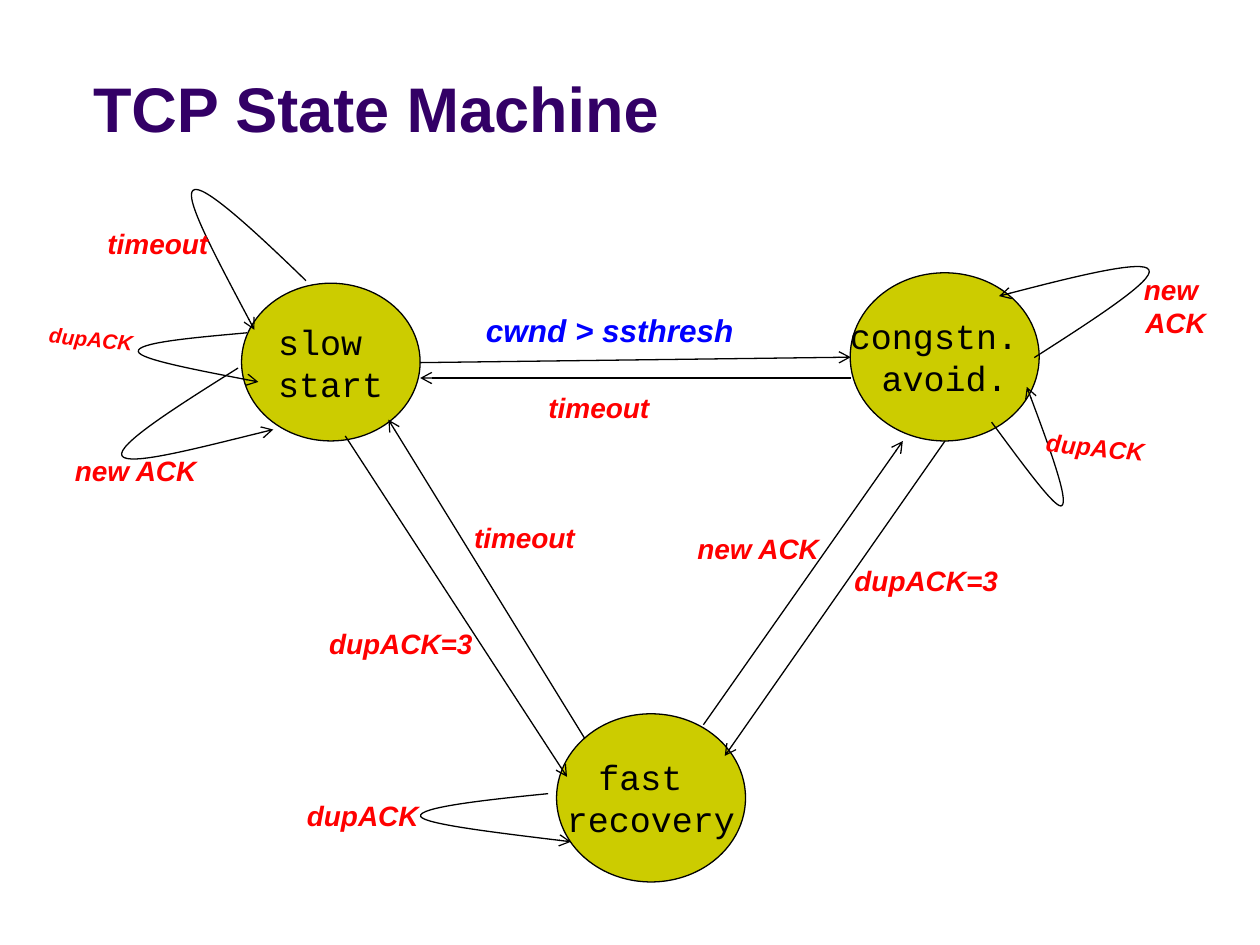
from dataclasses import dataclass

from lxml import etree
from pptx import Presentation
from pptx.dml.color import RGBColor
from pptx.enum.shapes import MSO_CONNECTOR, MSO_SHAPE
from pptx.enum.text import MSO_ANCHOR, MSO_AUTO_SIZE, PP_ALIGN
from pptx.oxml.ns import qn
from pptx.util import Cm, Pt

ELLIPSE, STRAIGHT = MSO_SHAPE.OVAL, MSO_CONNECTOR.STRAIGHT
LEFT, CENTER, RIGHT = PP_ALIGN.LEFT, PP_ALIGN.CENTER, PP_ALIGN.RIGHT
MIDDLE, BOTTOM = MSO_ANCHOR.MIDDLE, MSO_ANCHOR.BOTTOM
FIXED, GROW = MSO_AUTO_SIZE.NONE, MSO_AUTO_SIZE.SHAPE_TO_FIT_TEXT


@dataclass(frozen=True)
class Theme:
    title: str = "330066"
    state: str = "CCCC00"
    ink: str = "000000"
    event: str = "FF0000"
    condition: str = "0000FF"
    sans: str = "Arial"
    mono: str = "Courier New"
    title_size: int = 36
    state_size: int = 20
    condition_size: int = 18
    event_size: int = 16
    line_width: float = 0.75


class Diagram:
    def __init__(self, slide, theme):
        self.s, self.t = slide, theme

    def set_text(self, shape, text, color, align, frame, **font):
        tf = shape.text_frame
        for name, value in frame.items():
            setattr(tf, name, value)
        p = tf.paragraphs[0]
        p.text, p.alignment = text, align
        for r in p.runs:
            for name, value in font.items():
                setattr(r.font, name, value)
            r.font.color.rgb = RGBColor.from_string(color)

    def outline(self, line):
        line.color.rgb = RGBColor.from_string(self.t.ink)
        line.width = Pt(self.t.line_width)

    def arrowhead(self, line):
        self.outline(line)
        ln = line._get_or_add_ln()
        etree.SubElement(ln, qn("a:tailEnd"), type="arrow")

    def title(self, text, x, y, w, h):
        sp = self.s.shapes.title
        sp.left, sp.top, sp.width, sp.height = map(Cm, (x, y, w, h))
        frame = {"vertical_anchor": BOTTOM, "word_wrap": True, "auto_size": FIXED}
        self.set_text(sp, text, self.t.title, LEFT, frame, name=self.t.sans,
                      size=Pt(self.t.title_size), bold=True)

    def state(self, text, x, y, w, h):
        sp = self.s.shapes.add_shape(ELLIPSE, *map(Cm, (x, y, w, h)))
        sp.shadow.inherit = False
        sp.fill.solid()
        sp.fill.fore_color.rgb = RGBColor.from_string(self.t.state)
        self.outline(sp.line)
        frame = {"vertical_anchor": MIDDLE, "word_wrap": False}
        self.set_text(sp, text, self.t.ink, CENTER, frame, name=self.t.mono,
                      size=Pt(self.t.state_size))

    def transition(self, x1, y1, x2, y2):
        c = self.s.shapes.add_connector(STRAIGHT, *map(Cm, (x1, y1, x2, y2)))
        self.arrowhead(c.line)
        etree.SubElement(c._element.spPr, qn("a:effectLst"))

    def loop(self, *points):
        """Two joined Bezier curves: a start, then three points for each."""
        start, *rest = [(Cm(x), Cm(y)) for x, y in points]
        builder = self.s.shapes.build_freeform(*start)
        builder.add_line_segments(rest, close=False)
        sp = builder.convert_to_shape()
        sp.shadow.inherit = False
        sp.fill.background()
        # Regroup the straight segments as cubic curves
        outline = next(sp._element.iter(qn("a:path")))
        segments = outline.findall(qn("a:lnTo"))
        for i in range(0, len(segments), 3):
            curve = etree.SubElement(outline, qn("a:cubicBezTo"))
            for segment in segments[i:i + 3]:
                curve.append(segment[0])
                outline.remove(segment)
        self.arrowhead(sp.line)

    def label(self, text, x, y, w, h=0.94, size=None, color=None, rotation=0):
        sp = self.s.shapes.add_textbox(*map(Cm, (x, y, w, h)))
        sp.rotation = rotation
        frame = {"word_wrap": bool(rotation), "auto_size": GROW}
        self.set_text(sp, text, color or self.t.event, RIGHT, frame,
                      name=self.t.sans, size=Pt(size or self.t.event_size),
                      bold=True, italic=True)


def main():
    prs = Presentation()
    prs.slide_width, prs.slide_height = Cm(25.4), Cm(19.05)
    theme = Theme()
    d = Diagram(prs.slides.add_slide(prs.slide_layouts[5]), theme)
    d.title(" TCP State Machine", 1.27, 0.43, 22.86, 2.62)

    # States
    d.state("slow \nstart", 4.87, 5.71, 3.6, 3.18)
    d.state("congstn. \navoid.", 17.14, 5.5, 3.81, 3.39)
    d.state("fast \nrecovery", 11.22, 14.39, 3.81, 3.39)

    # Transitions between states
    for ends in (
        (8.47, 7.31, 17.15, 7.2),
        (17.15, 7.62, 8.47, 7.62),
        (6.96, 8.79, 11.43, 15.66),
        (19.05, 8.89, 14.61, 15.24),
        (14.18, 14.61, 18.2, 8.89),
        (11.79, 14.89, 7.83, 8.46),
    ):
        d.transition(*ends)

    # Loops back to the same state
    for points in (
        ((11.05, 16), (9.73, 16.13), (8.41, 16.28), (8.48, 16.46),
         (8.56, 16.61), (10.03, 16.79), (11.51, 16.97)),
        ((4.8, 7.42), (3.56, 8.2), (2.34, 8.97), (2.46, 9.19),
         (2.59, 9.4), (4.04, 9.02), (5.51, 8.66)),
        ((6.17, 5.66), (5.13, 4.65), (4.06, 3.66), (3.89, 3.84),
         (3.71, 3.99), (4.42, 5.31), (5.13, 6.65)),
        ((20.85, 7.21), (22.07, 6.43), (23.29, 5.64), (23.16, 5.44),
         (23.06, 5.23), (21.59, 5.59), (20.14, 5.97)),
        ((4.98, 6.71), (3.86, 6.81), (2.74, 6.91), (2.79, 7.09),
         (2.82, 7.24), (4.01, 7.47), (5.21, 7.7)),
        ((19.99, 8.51), (20.65, 9.4), (21.31, 10.31), (21.41, 10.19),
         (21.54, 10.08), (21.13, 8.94), (20.7, 7.8)),
    ):
        d.loop(*points)

    # Event labels
    d.label("cwnd > ssthresh", 9.32, 6.15, 5.72, 1.02,
            theme.condition_size, theme.condition)
    for text, width, places in (
        ("timeout", 2.72, ((10.62, 7.75), (9.12, 10.36), (1.73, 4.45))),
        ("dupACK=3", 3.58, ((6.2, 12.5), (16.79, 11.23))),
        ("new ACK", 3.12, ((13.64, 10.59), (1.09, 9.02))),
        ("dupACK", 2.92, ((5.77, 15.98),)),
    ):
        for x, y in places:
            d.label(text, x, y, width)
    d.label("new \nACK", 22.66, 5.36, 1.9, 1.63)
    d.label("dupACK", 0.69, 6.45, 2.24, 0.76, size=12, rotation=5.8)
    d.label("dupACK", 20.78, 8.59, 2.54, 0.86, size=14, rotation=5.8)

    prs.save("out.pptx")


if __name__ == "__main__":
    main()
